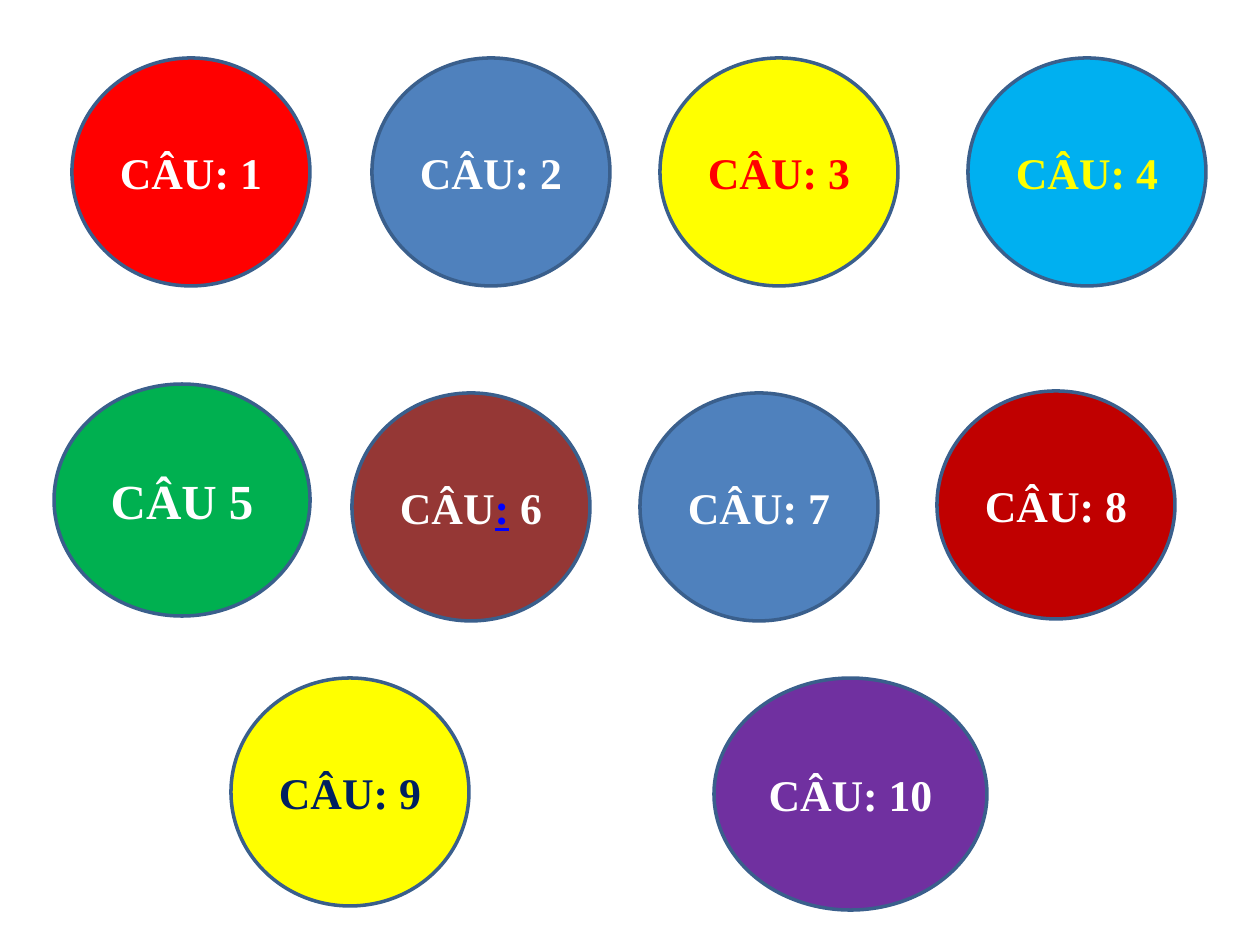
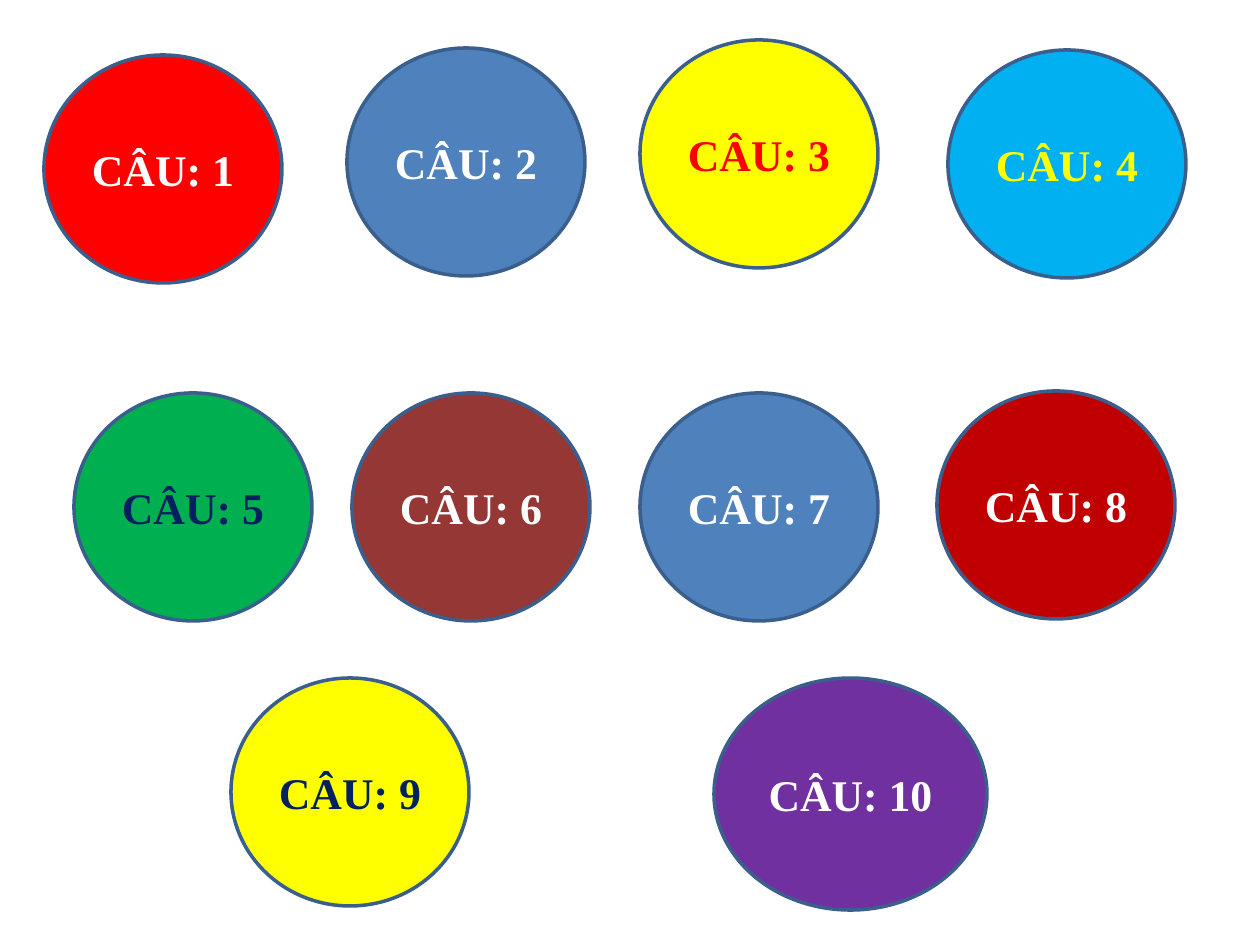
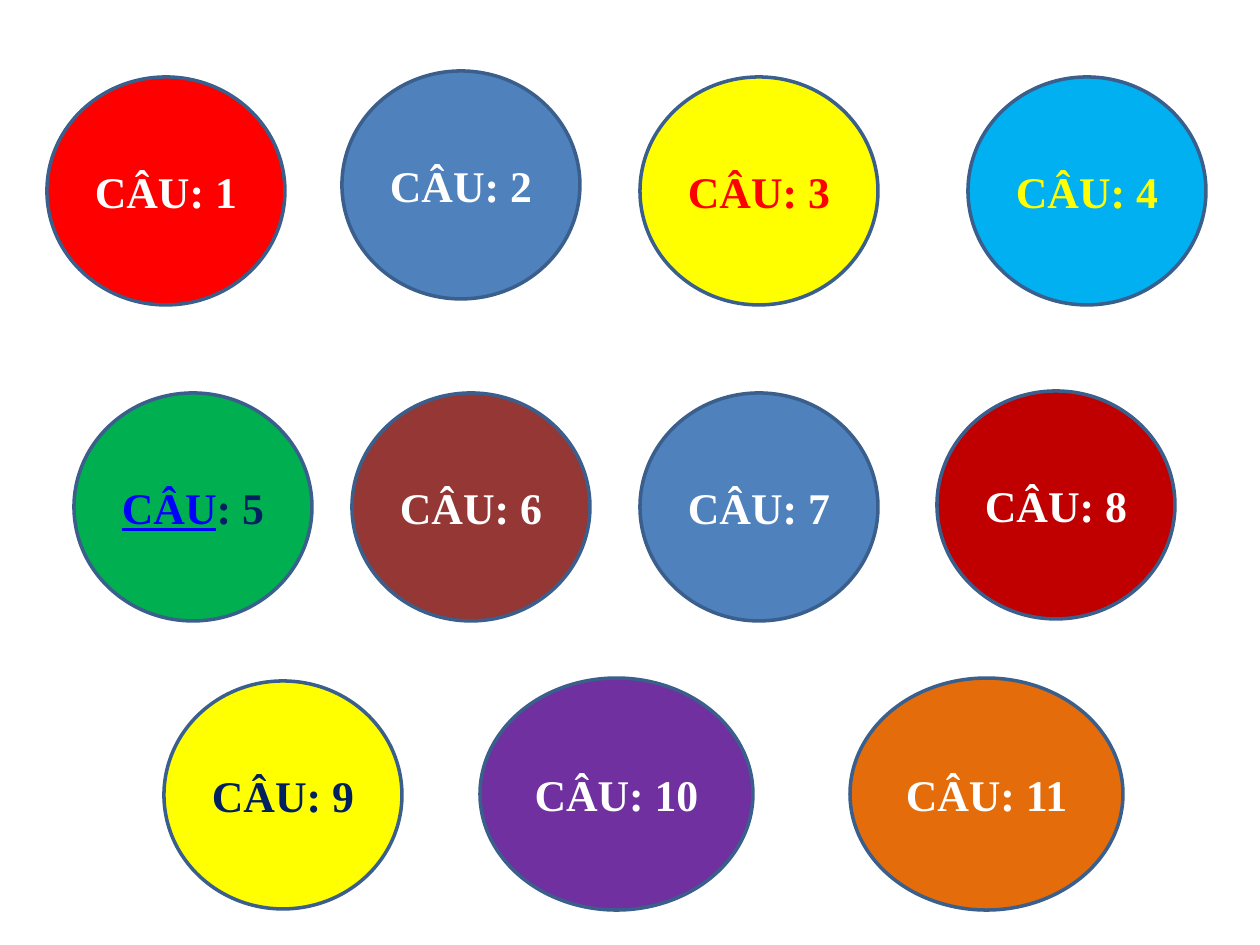
from pptx import Presentation
from pptx.dml.color import RGBColor
from pptx.enum.shapes import MSO_SHAPE as SHAPE
from pptx.enum.text import MSO_ANCHOR as ANCHOR, PP_ALIGN as ALIGN
from pptx.util import Emu, Pt

PX_PER_INCH = 126
FONT = "Times New Roman"
OUTLINE = "3A5F8C"
WHITE, YELLOW, RED, NAVY, BLUE = "FFFFFF", "FFFF00", "FF0000", "002060", "4F81BD"
MARKED = "0000FF"
ROUND, WIDE = (238, 228), (273, 232)

# Question number: (fill, text colour, size)
QUESTIONS = {
    1: (RED, WHITE, ROUND),
    2: (BLUE, WHITE, ROUND),
    3: (YELLOW, RED, ROUND),
    4: ("00B0F0", YELLOW, ROUND),
    5: ("00B050", NAVY, ROUND),
    6: ("953735", WHITE, ROUND),
    7: (BLUE, WHITE, ROUND),
    8: ("C00000", WHITE, ROUND),
    9: (YELLOW, NAVY, ROUND),
    10: ("7030A0", WHITE, WIDE),
    11: ("E46C0A", WHITE, WIDE),
}

# Left and top of each question; a board moves only the ones it names
USUAL_PLACES = {
    5: (74, 393), 6: (352, 393), 7: (640, 393), 8: (937, 391),
    9: (231, 678), 10: (714, 678),
}
# "marked" gives the underlined part of a label
BOARDS = [
    {
        "places": {1: (72, 58), 2: (372, 58), 3: (660, 58), 4: (968, 58), 5: (54, 384)},
        "marked": {6: ":"},
        "special": {5: {"label": "CÂU 5", "ink": WHITE, "points": 28,
                        "size": (256, 232), "outline_shape": SHAPE.OVAL}},
    },
    {
        "places": {1: (44, 55), 2: (347, 48), 3: (640, 40), 4: (948, 50)},
    },
    {
        "places": {1: (47, 77), 2: (342, 71), 3: (640, 77), 4: (968, 77),
                   9: (164, 681), 10: (480, 678), 11: (850, 678)},
        "marked": {5: "CÂU"},
    },
]


def px(length):
    return Emu(round(length * 914400 / PX_PER_INCH))


def color(code):
    return RGBColor.from_string(code)


def add_run(paragraph, text, ink, points, underline=False):
    run = paragraph.add_run()
    run.text = text
    font = run.font
    font.name, font.size, font.bold = FONT, Pt(points), True
    font.underline = underline
    font.color.rgb = color(ink)


def add_question(slide, place, fill, ink, size, label, marked="",
                 points=25, outline_shape=SHAPE.FLOWCHART_CONNECTOR):
    circle = slide.shapes.add_shape(outline_shape, *map(px, place + size))
    circle.shadow.inherit = False
    circle.fill.solid()
    circle.fill.fore_color.rgb = color(fill)
    circle.line.color.rgb = color(OUTLINE)
    circle.line.width = Pt(2)

    frame = circle.text_frame
    frame.word_wrap = True
    frame.vertical_anchor = ANCHOR.MIDDLE
    paragraph = frame.paragraphs[0]
    paragraph.alignment = ALIGN.CENTER
    before, found, after = label.partition(marked) if marked else (label, "", "")
    for text, underline in ((before, False), (found, True), (after, False)):
        if text:
            add_run(paragraph, text, MARKED if underline else ink, points, underline)


def add_board(deck, board):
    slide = deck.slides.add_slide(deck.slide_layouts[6])
    places = USUAL_PLACES | board["places"]
    for number, place in sorted(places.items()):
        fill, ink, size = QUESTIONS[number]
        look = {"fill": fill, "ink": ink, "size": size, "label": f"CÂU: {number}",
                "marked": board.get("marked", {}).get(number, "")}
        look |= board.get("special", {}).get(number, {})
        add_question(slide, place, **look)


def main():
    deck = Presentation()
    deck.slide_width, deck.slide_height = px(1260), px(945)
    for board in BOARDS:
        add_board(deck, board)
    deck.save("out.pptx")


if __name__ == "__main__":
    main()
